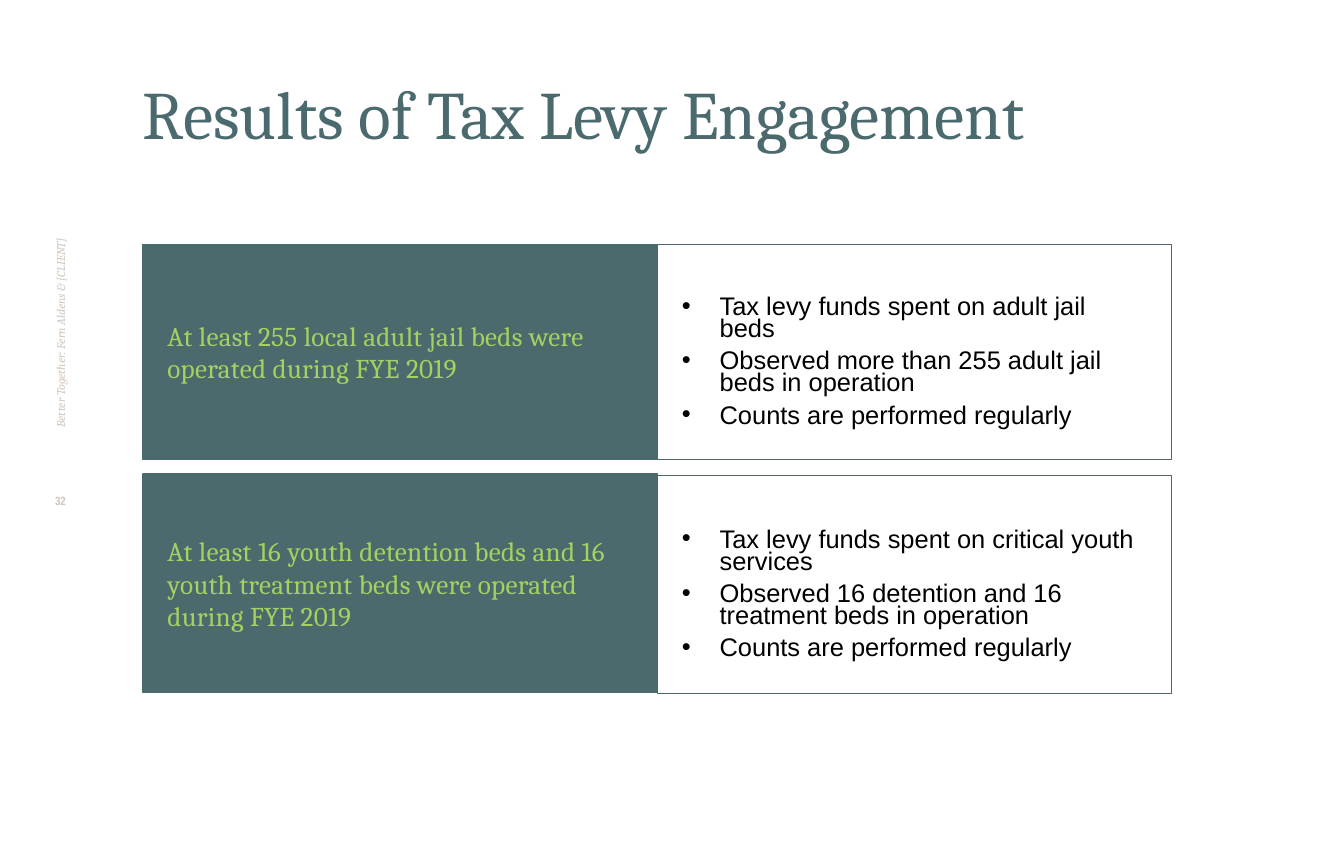
import dataclasses

import lxml.etree
import pptx
import pptx.dml.color
import pptx.enum.text
import pptx.oxml.ns
import pptx.shapes.base
import pptx.text.text
import pptx.util

EMU_PER_PX = 9144  # 100 px to the inch
TEAL, LIME, SAND, BLACK = "4B6A6E", "A6D060", "D1C6BD", "000000"
ANCHOR = pptx.enum.text.MSO_ANCHOR
ALIGN = pptx.enum.text.PP_ALIGN

LEFT, COLUMN_WIDTH, PADDING, INDENT = 117, 421, 20, 31


@dataclasses.dataclass(frozen=True)
class Result:
    finding_top: int
    details_top: int
    height: int
    finding: str
    details: tuple[str, ...]


RESULTS = (
    Result(200, 200, 176,
           "At least 255 local adult jail beds were operated during FYE 2019",
           ("Tax levy funds spent on adult jail beds",
            "Observed more than 255 adult jail beds in operation",
            "Counts are performed regularly")),
    Result(388, 389, 179,
           "At least 16 youth detention beds and 16 youth treatment beds "
           "were operated during FYE 2019",
           ("Tax levy funds spent on critical youth services",
            "Observed 16 detention and 16 treatment beds in operation",
            "Counts are performed regularly")),
)


def px(length: int) -> pptx.util.Emu:
    return pptx.util.Emu(length * EMU_PER_PX)


def color(value: str) -> pptx.dml.color.RGBColor:
    return pptx.dml.color.RGBColor.from_string(value)


def place(box: pptx.shapes.base.BaseShape, left: int, top: int,
          width: int, height: int) -> None:
    box.left, box.top = px(left), px(top)
    box.width, box.height = px(width), px(height)


def set_frame(box: pptx.shapes.base.BaseShape, anchor: ANCHOR,
              side: int = 0, top: int = 0) -> None:
    frame = box.text_frame
    frame.word_wrap = True
    frame.auto_size = pptx.enum.text.MSO_AUTO_SIZE.NONE
    frame.vertical_anchor = anchor
    frame.margin_left = frame.margin_right = px(side)
    frame.margin_top, frame.margin_bottom = px(top), 0


def write(para: pptx.text.text._Paragraph, text: str, *, font: str, size: int,
          fill: str, bold: bool = False, italic: bool = False,
          align: ALIGN = ALIGN.LEFT, before: int = 0,
          tracking: int = 0) -> None:
    para.alignment = align
    para.space_before = pptx.util.Pt(before)
    span = para.add_run()
    span.text = text
    span.font.name, span.font.size = font, pptx.util.Pt(size)
    span.font.bold, span.font.italic = bold, italic
    span.font.color.rgb = color(fill)
    if tracking:
        span.font._element.set("spc", str(tracking))


def add_bullet(para: pptx.text.text._Paragraph) -> None:
    para.level = 1
    para.line_spacing = pptx.util.Pt(13)
    properties = para._p.get_or_add_pPr()
    properties.set("marL", str(px(INDENT)))
    properties.set("indent", str(px(-INDENT)))
    for tag, name, value in (("a:buFont", "typeface", "Arial"),
                             ("a:buChar", "char", "•")):
        lxml.etree.SubElement(properties, pptx.oxml.ns.qn(tag)).set(name, value)


def outline(box: pptx.shapes.base.BaseShape) -> None:
    box.line.color.rgb = color(TEAL)
    box.line.width = pptx.util.Pt(0.75)


def draw_result(result: Result, finding: pptx.shapes.base.BaseShape,
                details: pptx.shapes.base.BaseShape) -> None:
    # Filled panel with the finding
    place(finding, LEFT, result.finding_top, COLUMN_WIDTH, result.height)
    set_frame(finding, ANCHOR.MIDDLE, side=PADDING)
    finding.fill.solid()
    finding.fill.fore_color.rgb = color(TEAL)
    outline(finding)
    write(finding.text_frame.paragraphs[0], result.finding,
          font="Cambria", size=16, fill=LIME, tracking=20)

    # Outlined panel with the supporting list
    place(details, LEFT + COLUMN_WIDTH, result.details_top,
          COLUMN_WIDTH, result.height)
    set_frame(details, ANCHOR.MIDDLE, side=PADDING, top=PADDING)
    details.fill.background()
    outline(details)
    frame = details.text_frame
    for number, text in enumerate(result.details):
        para = frame.add_paragraph() if number else frame.paragraphs[0]
        add_bullet(para)
        write(para, text, font="Arial", size=15, fill=BLACK,
              before=6 if number else 0)


def main() -> None:
    deck = pptx.Presentation()
    deck.slide_width, deck.slide_height = px(1100), px(700)
    page = deck.slides.add_slide(deck.slide_layouts.get_by_name("Comparison"))

    # Title
    title, *panels = page.placeholders
    place(title, LEFT, 50, 908, 75)
    set_frame(title, ANCHOR.BOTTOM)
    write(title.text_frame.paragraphs[0], "Results of Tax Levy Engagement",
          font="Cambria", size=40, fill=TEAL)

    # Results, one pair of panels each
    for result, finding, details in zip(RESULTS, panels[::2], panels[1::2]):
        draw_result(result, finding, details)

    # Vertical running footer
    footer = page.shapes.add_textbox(px(31), px(50), px(37), px(300))
    set_frame(footer, ANCHOR.MIDDLE)
    footer.text_frame._txBody.bodyPr.set("vert", "vert270")
    write(footer.text_frame.paragraphs[0],
          "Better Together: Fern Aldens & [CLIENT]",
          font="Cambria", size=7, fill=SAND, italic=True)

    # Page number
    page_number = page.shapes.add_textbox(px(31), px(404), px(37), px(38))
    set_frame(page_number, ANCHOR.TOP)
    write(page_number.text_frame.paragraphs[0], "32", font="Arial Narrow",
          size=7, fill=SAND, bold=True, align=ALIGN.CENTER)

    deck.save("out.pptx")


if __name__ == "__main__":
    main()
